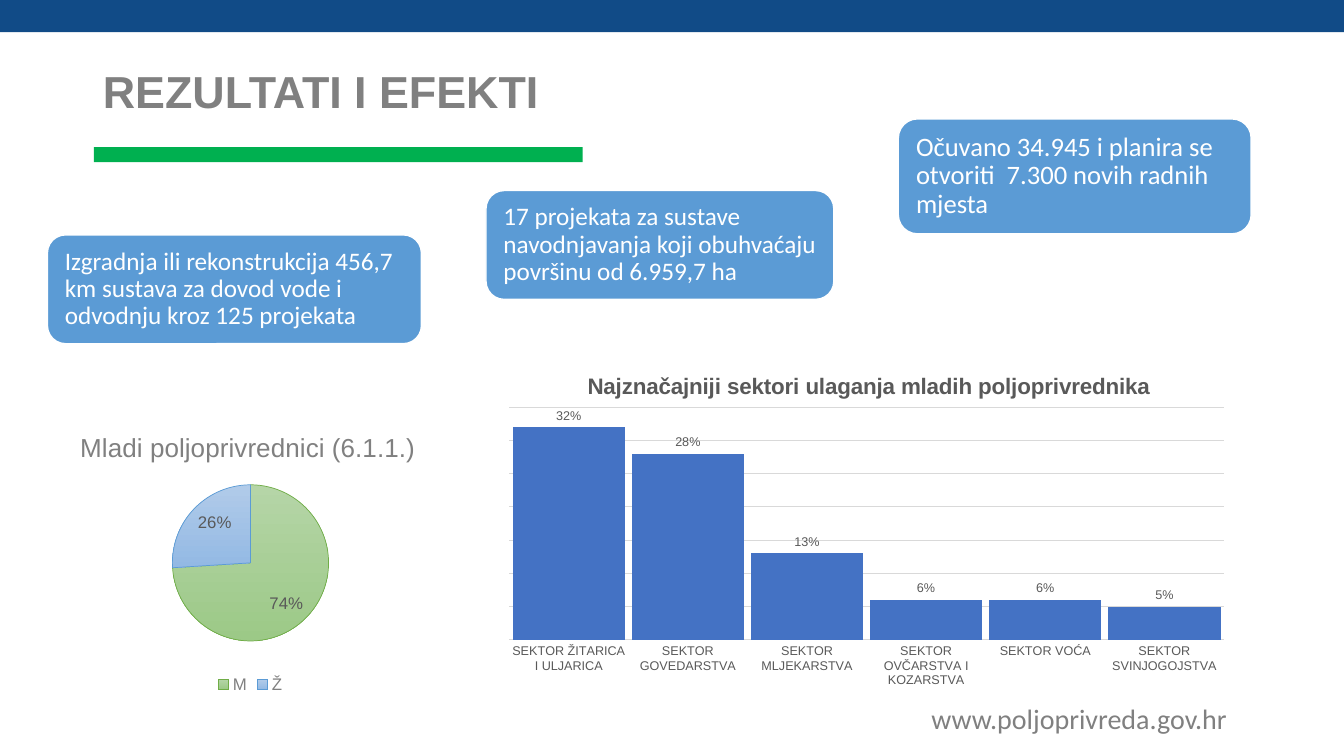
from lxml.etree import SubElement
from pptx import Presentation
from pptx.chart.data import CategoryChartData
from pptx.dml.color import RGBColor
from pptx.enum.chart import XL_CHART_TYPE, XL_LABEL_POSITION, XL_LEGEND_POSITION, XL_TICK_MARK
from pptx.enum.shapes import MSO_SHAPE
from pptx.enum.text import MSO_ANCHOR, PP_ALIGN
from pptx.oxml.ns import qn
from pptx.util import Inches, Pt

COLORS = {
    "navy": "114B87", "green": "00B050", "gray": "808080", "dark": "595959",
    "box": "5B9BD5", "white": "FFFFFF", "bar": "4472C4", "grid": "D9D9D9",
}
CALLOUTS = [
    ("Izgradnja ili rekonstrukcija 456,7 km sustava za dovod vode i odvodnju kroz 125 projekata",
     (0.47, 2.33, 3.71, 1.08), 18),
    ("17 projekata za sustave navodnjavanja koji obuhvaćaju površinu od 6.959,7 ha",
     (4.82, 1.89, 3.45, 1.08), 18),
    ("Očuvano 34.945 i planira se otvoriti  7.300 novih radnih mjesta",
     (8.91, 1.18, 3.5, 1.14), 19),
]
GENDER = {"M": 0.74, "Ž": 0.26}
# Gradient top, gradient bottom and outline of each slice
SLICES = [("B5D5A7", "9CC987", "70AD47"), ("B1CBE9", "93B9E4", "5B9BD5")]
SECTORS = {
    "SEKTOR ŽITARICA I ULJARICA": 0.32, "SEKTOR GOVEDARSTVA": 0.28,
    "SEKTOR MLJEKARSTVA": 0.13, "SEKTOR OVČARSTVA I KOZARSTVA": 0.06,
    "SEKTOR VOĆA": 0.06, "SEKTOR SVINJOGOJSTVA": 0.05,
}


def rgb(name):
    return RGBColor.from_string(COLORS.get(name, name))


def inches(box):
    return [Inches(v) for v in box]


def style_font(font, size, color, name="Arial", bold=False):
    font.size, font.name, font.bold = Pt(size), name, bold
    font.color.rgb = rgb(color)


def add_block(slide, shape_type, box, color):
    sp = slide.shapes.add_shape(shape_type, *inches(box))
    sp.shadow.inherit = False
    sp.fill.solid()
    sp.fill.fore_color.rgb = rgb(color)
    sp.line.fill.background()
    return sp


def add_callout(slide, text, box, size):
    sp = add_block(slide, MSO_SHAPE.ROUNDED_RECTANGLE, box, "box")
    sp.line.color.rgb = rgb("white")
    sp.line.width = Pt(1)
    tf = sp.text_frame
    tf.word_wrap = True
    tf.vertical_anchor = MSO_ANCHOR.MIDDLE
    tf.margin_left = tf.margin_right = Inches(0.12)
    tf.text = text
    p = tf.paragraphs[0]
    p.alignment = PP_ALIGN.LEFT
    p.line_spacing = 0.9
    style_font(p.runs[0].font, size, "white", "Calibri")


def set_title(slide, text):
    title = slide.shapes.title
    title.left, title.top, title.width, title.height = inches((0.92, 0.4, 11.5, 1.06))
    tf = title.text_frame
    tf.text = text
    tf.vertical_anchor = MSO_ANCHOR.MIDDLE
    p = tf.paragraphs[0]
    p.alignment = PP_ALIGN.LEFT
    p.line_spacing = 0.9
    style_font(p.runs[0].font, 32, "gray", bold=True)


def add_website(slide, text):
    tf = slide.shapes.add_textbox(*inches((9.14, 6.91, 3.28, 0.44))).text_frame
    tf.word_wrap = True
    tf.text = text
    style_font(tf.paragraphs[0].runs[0].font, 20, "gray", "Calibri")


def place(parent, index, **fractions):
    """Give a chart part a manual layout in fractions of the chart."""
    for old in parent.findall(qn("c:layout")):
        parent.remove(old)
    layout = SubElement(parent, qn("c:layout"))
    manual = SubElement(layout, qn("c:manualLayout"))
    if "w" in fractions:
        SubElement(manual, qn("c:layoutTarget")).set("val", "inner")
    for axis in "xy":
        SubElement(manual, qn(f"c:{axis}Mode")).set("val", "edge")
    for key, value in fractions.items():
        SubElement(manual, qn(f"c:{key}")).set("val", str(round(value, 4)))
    parent.insert(index, layout)


def add_chart(slide, kind, values, box, plot, label_position, label_size):
    """Add a one-series chart whose plot area fills the slide box plot."""
    data = CategoryChartData(number_format="0%")
    data.categories = list(values)
    data.add_series("Series 1", list(values.values()))
    chart = slide.shapes.add_chart(kind, *inches(box), data).chart
    style_font(chart.font, 10, "000000")
    left, top, width, height = box
    x, y, w, h = plot
    place(chart.plots[0]._element.getparent(), 0, x=(x - left) / width,
          y=(y - top) / height, w=w / width, h=h / height)
    chart.plots[0].has_data_labels = True
    labels = chart.plots[0].data_labels
    labels.show_value = True
    labels.show_percentage = False
    labels.number_format = "0%"
    labels.number_format_is_linked = False
    labels.position = label_position
    style_font(labels.font, label_size, "dark")
    return chart


def set_chart_title(chart, text, x, y, size, color, bold=False):
    tf = chart.chart_title.text_frame
    tf.text = text
    style_font(tf.paragraphs[0].runs[0].font, size, color, bold=bold)
    place(chart.chart_title._element, 1, x=x, y=y)
    chart.chart_title.include_in_layout = False


def add_gender_pie(slide):
    chart = add_chart(slide, XL_CHART_TYPE.PIE, GENDER, (0.2, 4.02, 4.57, 2.9),
                      (1.71, 4.81, 1.55, 1.55), XL_LABEL_POSITION.INSIDE_END, 12)
    set_chart_title(chart, "Mladi poljoprivrednici (6.1.1.)", 0.12, 0.07, 18.6, "gray")
    chart.has_legend = True
    chart.legend.position = XL_LEGEND_POSITION.BOTTOM
    chart.legend.include_in_layout = False
    style_font(chart.legend.font, 12, "gray")
    for i, (start, end, outline) in enumerate(SLICES):
        fmt = chart.series[0].points[i].format
        fmt.fill.gradient()
        fmt.fill.gradient_angle = 270
        for stop, color in zip(fmt.fill.gradient_stops, (start, end)):
            stop.color.rgb = rgb(color)
        fmt.line.color.rgb = rgb(outline)
        fmt.line.width = Pt(0.5)


def add_sector_columns(slide):
    chart = add_chart(slide, XL_CHART_TYPE.COLUMN_CLUSTERED, SECTORS, (4.9, 3.48, 7.39, 3.41),
                      (5.05, 4.04, 7.09, 2.31), XL_LABEL_POSITION.OUTSIDE_END, 9)
    set_chart_title(chart, "Najznačajniji sektori ulaganja mladih poljoprivrednika",
                    0.12, 0.05, 16, "dark", bold=True)
    chart.has_legend = False
    plot = chart.plots[0]
    plot.gap_width = 6
    plot.vary_by_categories = False
    fill = plot.series[0].format.fill
    fill.solid()
    fill.fore_color.rgb = rgb("bar")
    cat, val = chart.category_axis, chart.value_axis
    cat.major_tick_mark = XL_TICK_MARK.NONE
    style_font(cat.tick_labels.font, 9, "dark")
    val.visible = False
    val.minimum_scale, val.maximum_scale, val.major_unit = 0, 0.35, 0.05
    val.has_major_gridlines = True
    for line in (cat.format.line, val.major_gridlines.format.line):
        line.color.rgb = rgb("grid")
        line.width = Pt(0.75)


def main():
    prs = Presentation()
    prs.slide_width, prs.slide_height = Inches(13.33), Inches(7.5)
    slide = prs.slides.add_slide(prs.slide_layouts[5])
    add_block(slide, MSO_SHAPE.RECTANGLE, (0.93, 1.46, 4.85, 0.15), "green")
    add_block(slide, MSO_SHAPE.RECTANGLE, (0, 0, 13.33, 0.32), "navy")
    add_website(slide, "www.poljoprivreda.gov.hr")
    set_title(slide, "REZULTATI I EFEKTI")
    for text, box, size in CALLOUTS:
        add_callout(slide, text, box, size)
    add_gender_pie(slide)
    add_sector_columns(slide)
    prs.save("out.pptx")


if __name__ == "__main__":
    main()
